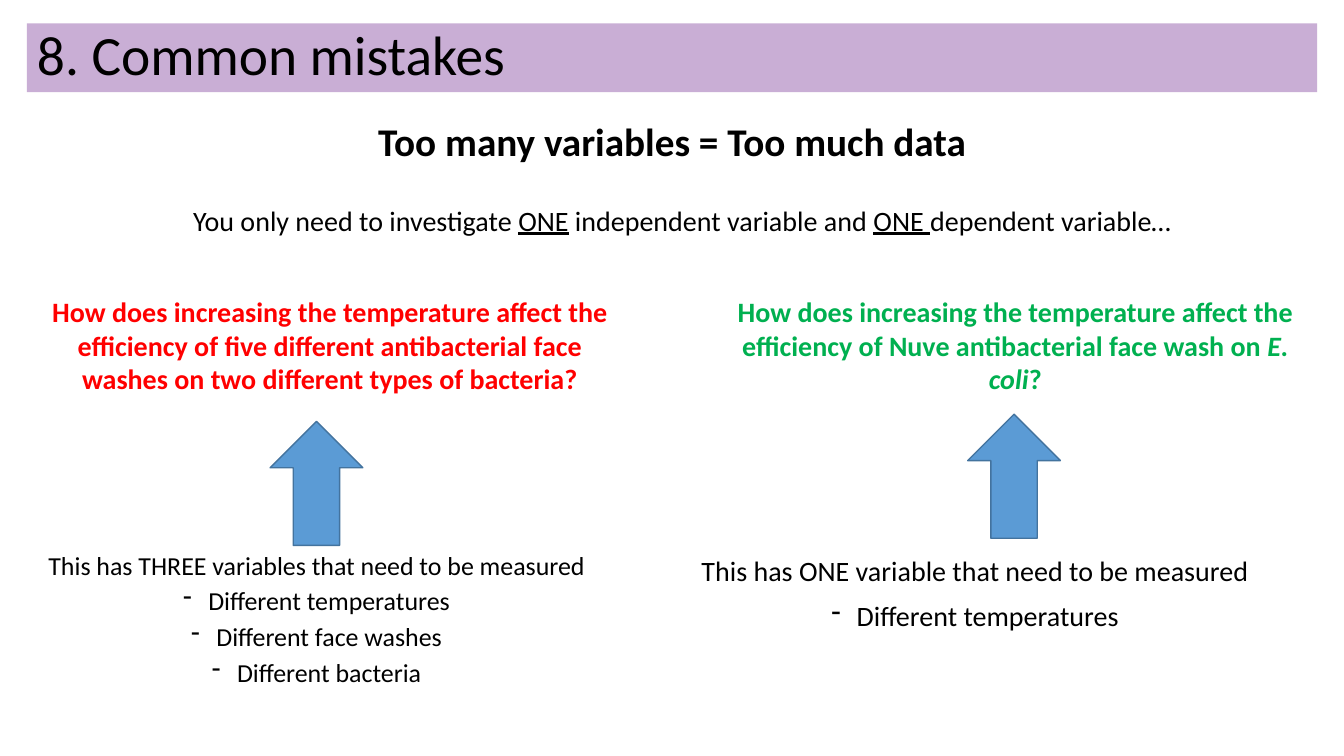
import pptx
import pptx.util
import pptx.dml.color
import pptx.enum.shapes
import pptx.enum.text
import pptx.oxml.xmlchemy

COLORS = {"banner": "C9AED5", "text": "000000", "wrong": "FF0000", "right": "00B050",
          "arrow": "5B9BD5", "arrow_line": "43739E"}
FONT = "Calibri"
CENTER = pptx.enum.text.PP_ALIGN.CENTER
rgb = pptx.dml.color.RGBColor.from_string

presentation = pptx.Presentation()
presentation.slide_width = pptx.util.Inches(13.33)
presentation.slide_height = pptx.util.Inches(7.5)
slide = presentation.slides.add_slide(presentation.slide_layouts[1])


def area(left, top, width, height):
    """Turn percentages of the slide into left, top, width and height."""
    across, down = presentation.slide_width / 100, presentation.slide_height / 100
    return [round(left * across), round(top * down), round(width * across), round(height * down)]


def write(shape, paragraphs, size, color="text", bold=False, align=CENTER, spacing=1.0, before=0):
    """Fill a shape with paragraphs of (text, style) runs; later paragraphs get a dash."""
    frame = shape.text_frame
    frame.word_wrap = True
    frame.auto_size = pptx.enum.text.MSO_AUTO_SIZE.NONE
    for index, runs in enumerate(paragraphs):
        paragraph = frame.add_paragraph() if index else frame.paragraphs[0]
        paragraph.alignment = align
        paragraph.line_spacing = spacing
        paragraph.space_before = pptx.util.Pt(before)
        properties = paragraph._p.get_or_add_pPr()
        indent = pptx.util.Inches(0.25) if index else 0
        properties.set("marL", str(indent))
        properties.set("indent", str(-indent))
        if index:
            bullet = pptx.oxml.xmlchemy.OxmlElement("a:buChar")
            bullet.set("char", "-")
        else:
            bullet = pptx.oxml.xmlchemy.OxmlElement("a:buNone")
        properties.append(bullet)
        for text, style in runs:
            run = paragraph.add_run()
            run.text = text
            run.font.name = FONT
            run.font.size = pptx.util.Pt(size)
            run.font.bold = bold
            run.font.italic = style == "italic"
            run.font.underline = style == "underline"
            run.font.color.rgb = rgb(COLORS[color])


# Title banner and headline
title, headline = slide.shapes.title, slide.placeholders[1]
title.left, title.top, title.width, title.height = area(2, 3.1, 96, 9.1)
title.fill.solid()
title.fill.fore_color.rgb = rgb(COLORS["banner"])
title.text_frame.vertical_anchor = pptx.enum.text.MSO_ANCHOR.MIDDLE
write(title, [[("8. Common mistakes", "")]], 39.6,
      align=pptx.enum.text.PP_ALIGN.LEFT, spacing=0.9)
headline.left, headline.top, headline.width, headline.height = area(2, 14.9, 96, 10)
headline.text_frame.vertical_anchor = pptx.enum.text.MSO_ANCHOR.TOP
write(headline, [[("Too many variables = Too much data", "")]], 28, bold=True)

# Advice line
advice = slide.shapes.add_textbox(*area(5.2, 26.7, 91.1, 28.9))
write(advice, [[("You only need to investigate ", ""), ("ONE", "underline"),
                (" independent variable and ", ""), ("ONE ", "underline"),
                ("dependent variable…", "")]], 20, spacing=0.9, before=10)

# Two examples: question on top, arrow pointing to it, explanation below
examples = [
    {"color": "wrong", "question_left": 2, "arrow": (20.1, 55.75), "reason_left": 1,
     "size": 18.5, "spacing": 0.7,
     "question": [("How does increasing the temperature affect the efficiency of five different "
                   "antibacterial face washes on two different types of bacteria?", "")],
     "reason": ["This has THREE variables that need to be measured", "Different temperatures",
                "Different face washes", "Different bacteria"]},
    {"color": "right", "question_left": 53, "arrow": (72, 54.8), "reason_left": 50,
     "size": 20, "spacing": 0.9,
     "question": [("How does increasing the temperature affect the efficiency of Nuve "
                   "antibacterial face wash on ", ""), ("E. coli", "italic"), ("?", "")],
     "reason": ["This has ONE variable that need to be measured", "Different temperatures"]},
]
for example in examples:
    question = slide.shapes.add_textbox(*area(example["question_left"], 38.3, 45.1, 20.9))
    write(question, [example["question"]], 20, example["color"], bold=True)

    arrow = slide.shapes.add_shape(pptx.enum.shapes.MSO_SHAPE.UP_ARROW,
                                   *area(*example["arrow"], 6.9, 16.4))
    arrow.shadow.inherit = False
    arrow.fill.solid()
    arrow.fill.fore_color.rgb = rgb(COLORS["arrow"])
    arrow.line.color.rgb = rgb(COLORS["arrow_line"])
    arrow.line.width = pptx.util.Pt(1)

    reason = slide.shapes.add_textbox(*area(example["reason_left"], 73.1, 45.1, 23.5))
    write(reason, [[(line, "")] for line in example["reason"]], example["size"],
          spacing=example["spacing"], before=10)

presentation.save("out.pptx")
